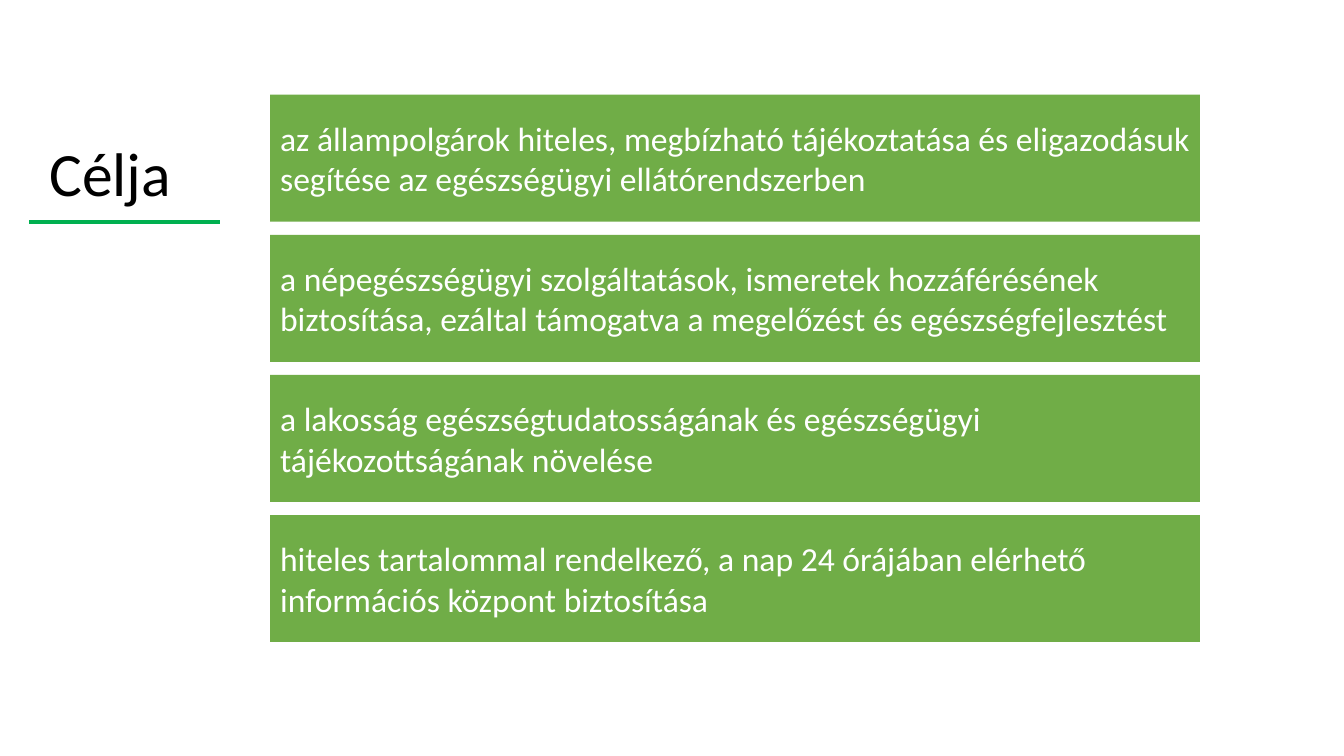
from dataclasses import dataclass

from lxml import etree
from pptx import Presentation
from pptx.dml.color import RGBColor
from pptx.enum.shapes import MSO_CONNECTOR, MSO_SHAPE
from pptx.enum.text import MSO_ANCHOR, MSO_AUTO_SIZE, PP_ALIGN
from pptx.oxml.ns import qn
from pptx.slide import Slide
from pptx.text.text import TextFrame
from pptx.util import Inches, Pt

RECTANGLE = MSO_SHAPE.RECTANGLE
STRAIGHT = MSO_CONNECTOR.STRAIGHT
TOP = MSO_ANCHOR.TOP
MIDDLE = MSO_ANCHOR.MIDDLE
LEFT = PP_ALIGN.LEFT
NO_AUTO_SIZE = MSO_AUTO_SIZE.NONE

TITLE_ONLY_LAYOUT = 5
FONT = "Calibri"
BLACK = "000000"
WHITE = "FFFFFF"
GOAL_GREEN = "70AD47"
RULE_GREEN = "00B050"

GOAL_LEFT, GOAL_TOP = 2.68, 0.94
GOAL_WIDTH, GOAL_HEIGHT = 9.22, 1.26
GOAL_PITCH = 1.39

GOAL_TEXTS = (
    "az állampolgárok hiteles, megbízható tájékoztatása és eligazodásuk segítése az egészségügyi ellátórendszerben",
    "a népegészségügyi szolgáltatások, ismeretek hozzáférésének biztosítása, ezáltal támogatva a megelőzést és egészségfejlesztést",
    "a lakosság egészségtudatosságának és egészségügyi tájékozottságának növelése",
    "hiteles tartalommal rendelkező, a nap 24 órájában elérhető információs központ biztosítása",
)


@dataclass(frozen=True)
class Goal:
    text: str
    top: float


def color(value: str) -> RGBColor:
    return RGBColor.from_string(value)


def write_text(frame: TextFrame, text: str, size: int, text_color: str, anchor: MSO_ANCHOR) -> None:
    frame.text = text
    frame.word_wrap = True
    frame.auto_size = NO_AUTO_SIZE
    frame.vertical_anchor = anchor
    paragraph = frame.paragraphs[0]
    paragraph.alignment = LEFT
    font = paragraph.runs[0].font
    font.name = FONT
    font.size = Pt(size)
    font.color.rgb = color(text_color)


def add_title(slide: Slide) -> None:
    title = slide.shapes.title
    title.left, title.top = Inches(0.39), Inches(1.29)
    title.width, title.height = Inches(11.65), Inches(0.84)
    write_text(title.text_frame, "Célja", 44, BLACK, TOP)


def add_goal(slide: Slide, goal: Goal) -> None:
    shape = slide.shapes.add_shape(
        RECTANGLE, Inches(GOAL_LEFT), Inches(goal.top), Inches(GOAL_WIDTH), Inches(GOAL_HEIGHT)
    )
    shape.shadow.inherit = False
    shape.fill.solid()
    shape.fill.fore_color.rgb = color(GOAL_GREEN)
    shape.line.fill.background()
    write_text(shape.text_frame, goal.text, 24, WHITE, MIDDLE)


def add_title_rule(slide: Slide) -> None:
    rule = slide.shapes.add_connector(STRAIGHT, Inches(0.29), Inches(2.2), Inches(2.18), Inches(2.2))
    rule.line.color.rgb = color(RULE_GREEN)
    rule.line.width = Pt(3)
    etree.SubElement(rule._element.spPr, qn("a:effectLst"))


def main() -> None:
    presentation = Presentation()
    presentation.slide_width = Inches(13.33)
    presentation.slide_height = Inches(7.5)
    slide = presentation.slides.add_slide(presentation.slide_layouts[TITLE_ONLY_LAYOUT])
    add_title(slide)
    for index, text in enumerate(GOAL_TEXTS):
        add_goal(slide, Goal(text, GOAL_TOP + index * GOAL_PITCH))
    add_title_rule(slide)
    presentation.save("out.pptx")


if __name__ == "__main__":
    main()
